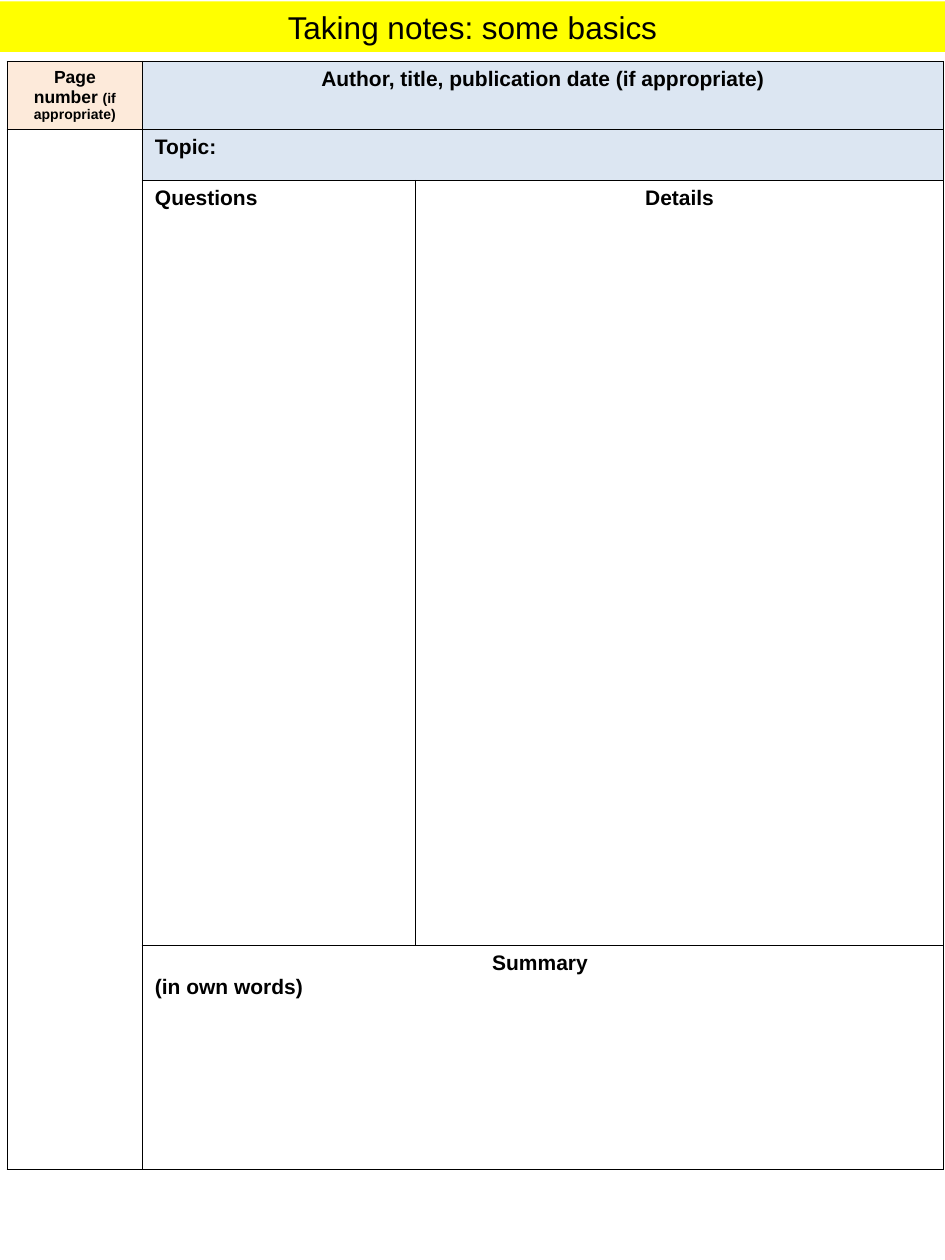
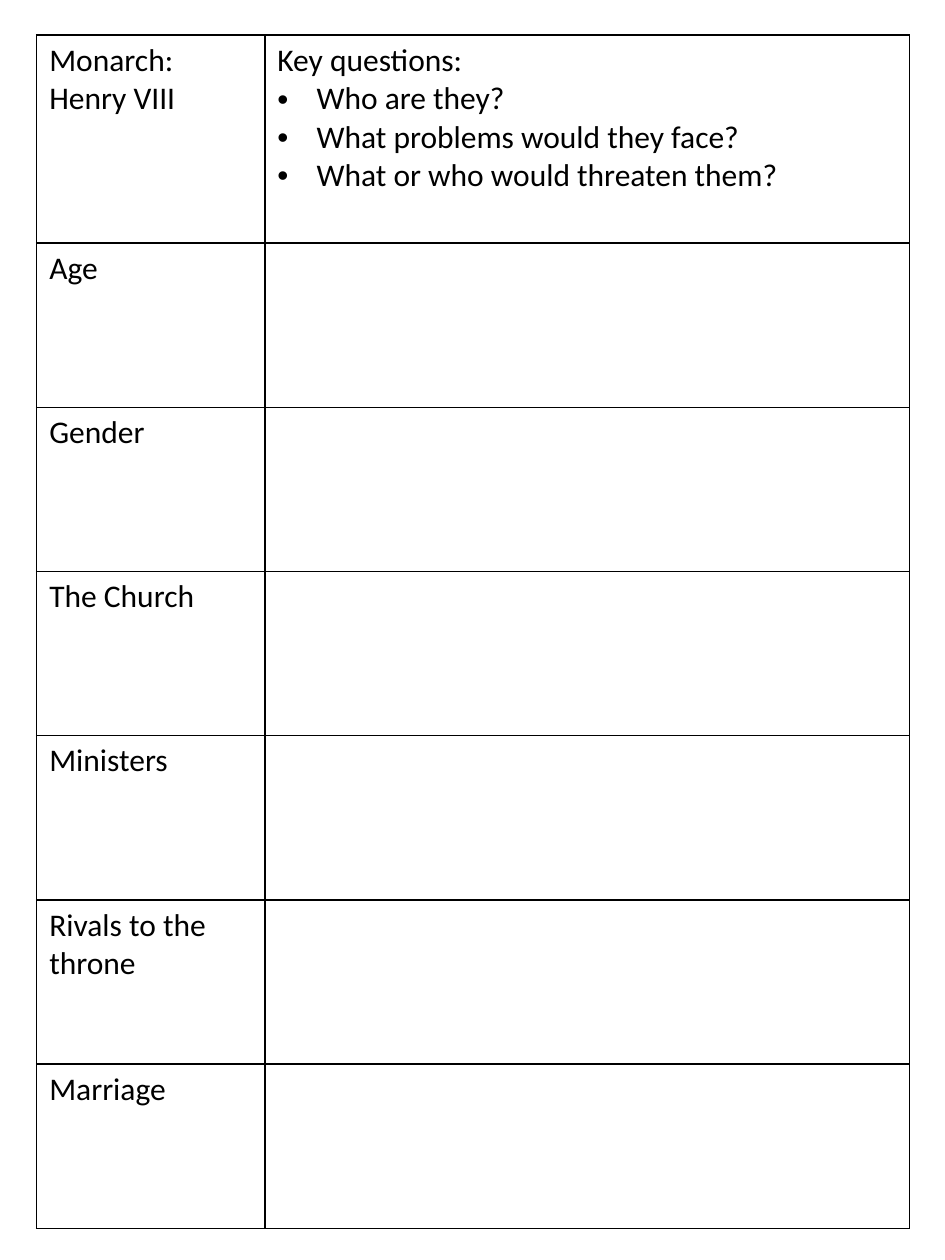
from dataclasses import dataclass, field

from lxml.etree import SubElement
from pptx import Presentation
from pptx.dml.color import RGBColor
from pptx.enum.shapes import MSO_SHAPE as Preset
from pptx.enum.text import MSO_ANCHOR as Anchor, PP_ALIGN as Align
from pptx.oxml.ns import qn
from pptx.slide import Slide
from pptx.table import Table, _Cell as Cell
from pptx.util import Cm, Pt


# Shared look
@dataclass(frozen=True)
class Theme:
    black: RGBColor = RGBColor(0x00, 0x00, 0x00)
    yellow: RGBColor = RGBColor(0xFF, 0xFF, 0x00)
    peach: RGBColor = RGBColor(0xFD, 0xEA, 0xDA)
    pale_blue: RGBColor = RGBColor(0xDC, 0xE6, 0xF2)
    basics_font: str = "Arial"
    monarch_font: str = "Calibri"
    large: Pt = Pt(18)
    medium: Pt = Pt(12)
    small: Pt = Pt(10)
    tiny: Pt = Pt(8)
    border: Pt = Pt(1)
    bullet_indent: Cm = Cm(0.79)


THEME = Theme()


@dataclass(frozen=True)
class Line:
    text: str
    size: Pt = THEME.large
    font: str = THEME.monarch_font
    bold: bool = False
    align: Align = Align.LEFT
    bullet: bool = False
    aside: str = ""  # smaller words that end the line


@dataclass(frozen=True)
class Entry:
    row: int
    column: int
    lines: list[Line] = field(default_factory=list)
    fill: RGBColor | None = None
    rows: int = 1
    columns: int = 1


@dataclass(frozen=True)
class Grid:
    left: float
    top: float
    widths: list[float]
    heights: list[float]
    entries: list[Entry]


def heading(text: str, align: Align = Align.LEFT, size: Pt = THEME.medium, aside: str = "") -> Line:
    return Line(text, size, THEME.basics_font, True, align, aside=aside)


# Drawing
def write_line(paragraph, line: Line) -> None:
    paragraph.alignment = line.align
    font = paragraph.font
    font.name, font.size, font.bold = line.font, line.size, line.bold
    font.color.rgb = THEME.black
    paragraph.add_run().text = line.text
    if line.aside:
        aside = paragraph.add_run()
        aside.text = line.aside
        aside.font.size = THEME.tiny
    if line.bullet:
        properties = paragraph._p.get_or_add_pPr()
        properties.set("marL", str(THEME.bullet_indent))
        properties.set("indent", str(-THEME.bullet_indent))
        bullet_font = properties.makeelement(qn("a:buFont"), {"typeface": "Arial"})
        bullet = properties.makeelement(qn("a:buChar"), {"char": "•"})
        properties.insert(0, bullet_font)
        bullet_font.addnext(bullet)


def write_lines(frame, lines: list[Line]) -> None:
    for index, line in enumerate(lines):
        write_line(frame.add_paragraph() if index else frame.paragraphs[0], line)


def add_borders(cell: Cell) -> None:
    properties = cell._tc.get_or_add_tcPr()
    for side in ("a:lnL", "a:lnR", "a:lnT", "a:lnB"):
        edge = SubElement(properties, qn(side), w=str(THEME.border))
        fill = SubElement(edge, qn("a:solidFill"))
        SubElement(fill, qn("a:srgbClr"), val=str(THEME.black))


def add_grid(slide: Slide, grid: Grid) -> None:
    table: Table = slide.shapes.add_table(
        len(grid.heights), len(grid.widths), Cm(grid.left), Cm(grid.top),
        Cm(sum(grid.widths)), Cm(sum(grid.heights)),
    ).table
    table.first_row = table.horz_banding = False
    for column, width in zip(table.columns, grid.widths):
        column.width = Cm(width)
    for row, height in zip(table.rows, grid.heights):
        row.height = Cm(height)
    for cell in table.iter_cells():
        add_borders(cell)
        cell.fill.background()
    for entry in grid.entries:
        cell = table.cell(entry.row, entry.column)
        if entry.rows > 1 or entry.columns > 1:
            cell.merge(table.cell(entry.row + entry.rows - 1, entry.column + entry.columns - 1))
        if entry.fill is not None:
            cell.fill.solid()
            cell.fill.fore_color.rgb = entry.fill
        write_lines(cell.text_frame, entry.lines)


def add_title_band(slide: Slide, title: str, width: int) -> None:
    band = slide.shapes.add_shape(Preset.RECTANGLE, 0, Cm(0.03), width, Cm(1.02))
    band.shadow.inherit = False
    band.fill.solid()
    band.fill.fore_color.rgb = THEME.yellow
    band.line.fill.background()
    band.text_frame.word_wrap = True
    band.text_frame.vertical_anchor = Anchor.TOP
    write_lines(band.text_frame, [Line(title, font=THEME.basics_font, align=Align.CENTER)])


# Note-taking sheet
BASICS = Grid(0.15, 1.24, [2.72, 5.51, 10.64], [1.37, 1.03, 15.42, 4.52], [
    Entry(0, 0, [heading("Page number ", Align.CENTER, THEME.small, "(if appropriate)")],
          THEME.peach),
    Entry(0, 1, [heading("Author, title, publication date (if appropriate)", Align.CENTER)],
          THEME.pale_blue, columns=2),
    Entry(1, 0, rows=3),
    Entry(1, 1, [heading("Topic:")], THEME.pale_blue, columns=2),
    Entry(2, 1, [heading("Questions")]),
    Entry(2, 2, [heading("Details", Align.CENTER)]),
    Entry(3, 1, [heading("Summary ", Align.CENTER), heading("(in own words)")], columns=2),
])

# Monarch sheet
ASPECTS = ["Age", "Gender", "The Church", "Ministers", "Rivals to the throne", "Marriage"]
KEY_QUESTIONS = [
    "Who are they?",
    "What problems would they face?",
    "What or who would threaten them?",
]
MONARCH = Grid(0.74, 0.71, [4.6, 13.0], [4.19] + [3.31] * len(ASPECTS), [
    Entry(0, 0, [Line("Monarch: Henry VIII")]),
    Entry(0, 1, [Line("Key questions:")] + [Line(text, bullet=True) for text in KEY_QUESTIONS]),
    *(Entry(row, 0, [Line(aspect)]) for row, aspect in enumerate(ASPECTS, start=1)),
])


def main() -> None:
    deck = Presentation()
    deck.slide_width, deck.slide_height = Cm(19.05), Cm(25.4)
    blank = deck.slide_layouts[6]

    basics_sheet = deck.slides.add_slide(blank)
    add_grid(basics_sheet, BASICS)
    add_title_band(basics_sheet, "Taking notes: some basics", deck.slide_width)

    add_grid(deck.slides.add_slide(blank), MONARCH)
    deck.save("out.pptx")


if __name__ == "__main__":
    main()
